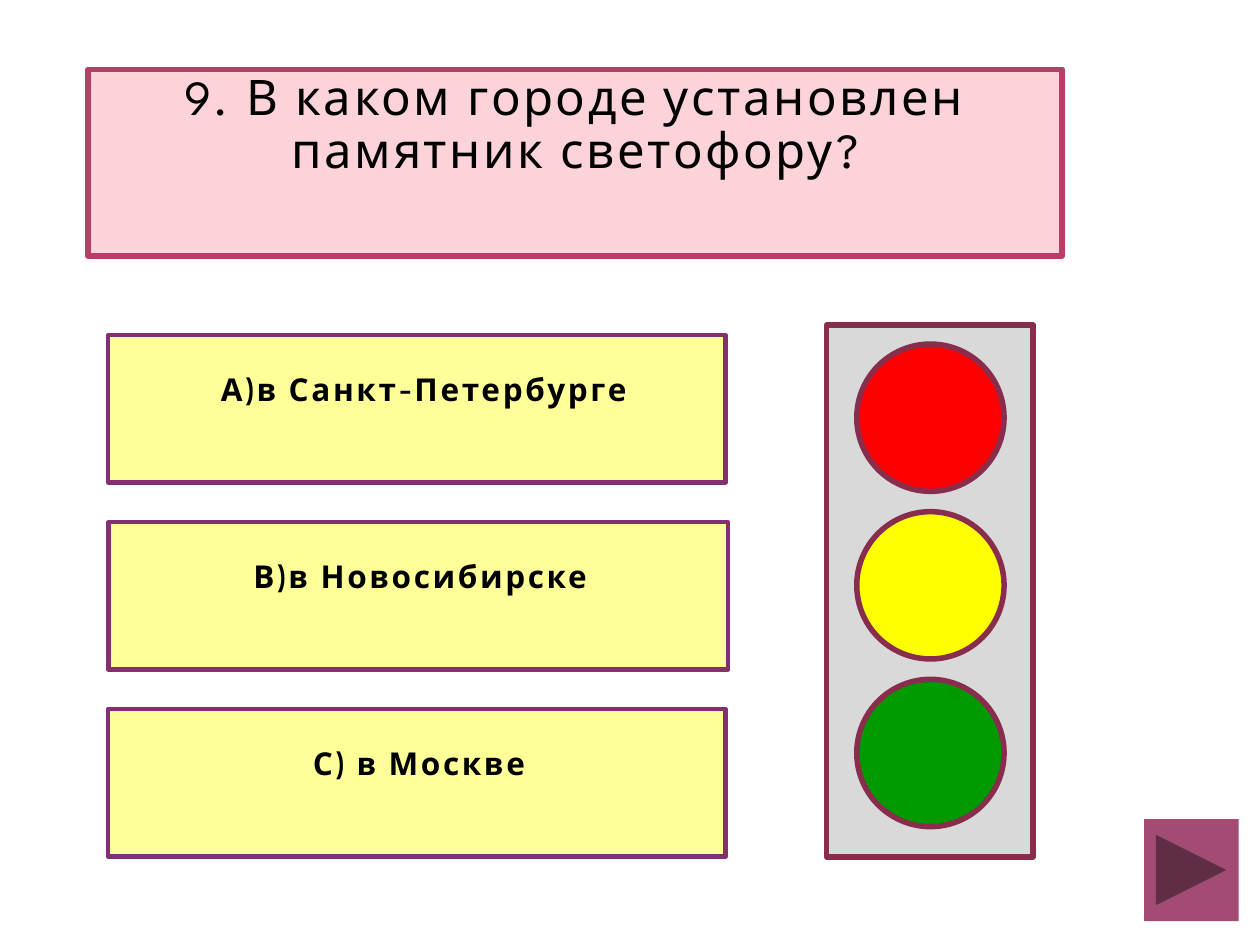
from dataclasses import dataclass

from lxml import etree
from pptx import Presentation
from pptx.dml.color import RGBColor
from pptx.enum.shapes import MSO_SHAPE
from pptx.enum.text import MSO_ANCHOR, PP_ALIGN
from pptx.oxml.ns import qn
from pptx.util import Pt

RECT = MSO_SHAPE.RECTANGLE
OVAL = MSO_SHAPE.OVAL
NEXT = MSO_SHAPE.ACTION_BUTTON_FORWARD_OR_NEXT
TOP = MSO_ANCHOR.TOP
CENTER = PP_ALIGN.CENTER

BLACK = RGBColor(0x00, 0x00, 0x00)
PINK = RGBColor(0xFD, 0xD3, 0xDA)
ROSE = RGBColor(0xB8, 0x3D, 0x68)
CREAM = RGBColor(0xFF, 0xFF, 0x99)
PLUM = RGBColor(0x85, 0x2F, 0x73)
GREY = RGBColor(0xD9, 0xD9, 0xD9)
WINE = RGBColor(0x88, 0x2D, 0x4D)
RED = RGBColor(0xFF, 0x00, 0x00)
YELLOW = RGBColor(0xFF, 0xFF, 0x00)
GREEN = RGBColor(0x00, 0x99, 0x00)
MAUVE = RGBColor(0xA3, 0x4B, 0x73)

TITLE = {"name": "League Spartan", "size": Pt(28), "bold": False}
ANSWER = {"name": "Cabin", "size": Pt(18), "bold": True}
TITLE_BOX = {"margin_left": Pt(3.6), "margin_right": Pt(3.6),
             "margin_top": Pt(2), "margin_bottom": 0}
ANSWER_BOX = {"margin_left": Pt(9.4), "margin_right": Pt(7.2),
              "margin_top": Pt(20), "margin_bottom": Pt(3.6)}


@dataclass
class Block:
    kind: int
    left: float
    top: float
    width: float
    height: float
    fill: RGBColor
    edge: RGBColor | None = None
    weight: float = 3.15


def draw(slide, block: Block):
    shape = slide.shapes.add_shape(
        block.kind, Pt(block.left), Pt(block.top),
        Pt(block.width), Pt(block.height))
    shape.shadow.inherit = False
    shape.fill.solid()
    shape.fill.fore_color.rgb = block.fill
    if block.edge is None:
        shape.line.fill.background()
    else:
        shape.line.color.rgb = block.edge
        shape.line.width = Pt(block.weight)
        outline = shape.element.spPr.find(qn("a:ln"))
        etree.SubElement(outline, qn("a:round"))
    return shape


def write(shape, text: str, style: dict, box: dict, pitch: float) -> None:
    frame = shape.text_frame
    for key, value in {**box, "word_wrap": True, "vertical_anchor": TOP}.items():
        setattr(frame, key, value)
    para = frame.paragraphs[0]
    para.alignment = CENTER
    para.line_spacing = pitch
    run = para.add_run()
    run.text = text
    for key, value in style.items():
        setattr(run.font, key, value)
    run.font.color.rgb = BLACK
    run.font._element.set("spc", "150")


def main() -> None:
    deck = Presentation()
    deck.slide_width, deck.slide_height = Pt(720), Pt(540)
    slide = deck.slides.add_slide(deck.slide_layouts[6])

    title = draw(slide, Block(RECT, 50.4, 39.6, 556.6, 106.6, PINK, ROSE))
    write(title, "9. В каком городе установлен памятник светофору?",
          TITLE, TITLE_BOX, 0.9)

    answers = ((" А)в Санкт-Петербурге", 352.8),
               ("В)в Новосибирске", 354.2),
               ("С) в Москве", 352.8))
    for row, (text, width) in enumerate(answers):
        card = draw(slide, Block(RECT, 61.9, 191.5 + 106.9 * row, width, 84.2,
                                 CREAM, PLUM, 2.5))
        write(card, text, ANSWER, ANSWER_BOX, 1.0)

    draw(slide, Block(RECT, 472.3, 185.8, 118.1, 303.8, GREY, WINE))
    for row, color in enumerate((RED, YELLOW, GREEN)):
        draw(slide, Block(OVAL, 489.6, 196.6 + 95.8 * row, 84.2, 84.2,
                          color, WINE))

    draw(slide, Block(NEXT, 653.8, 468, 54, 58.3, MAUVE))
    deck.save("out.pptx")


if __name__ == "__main__":
    main()
